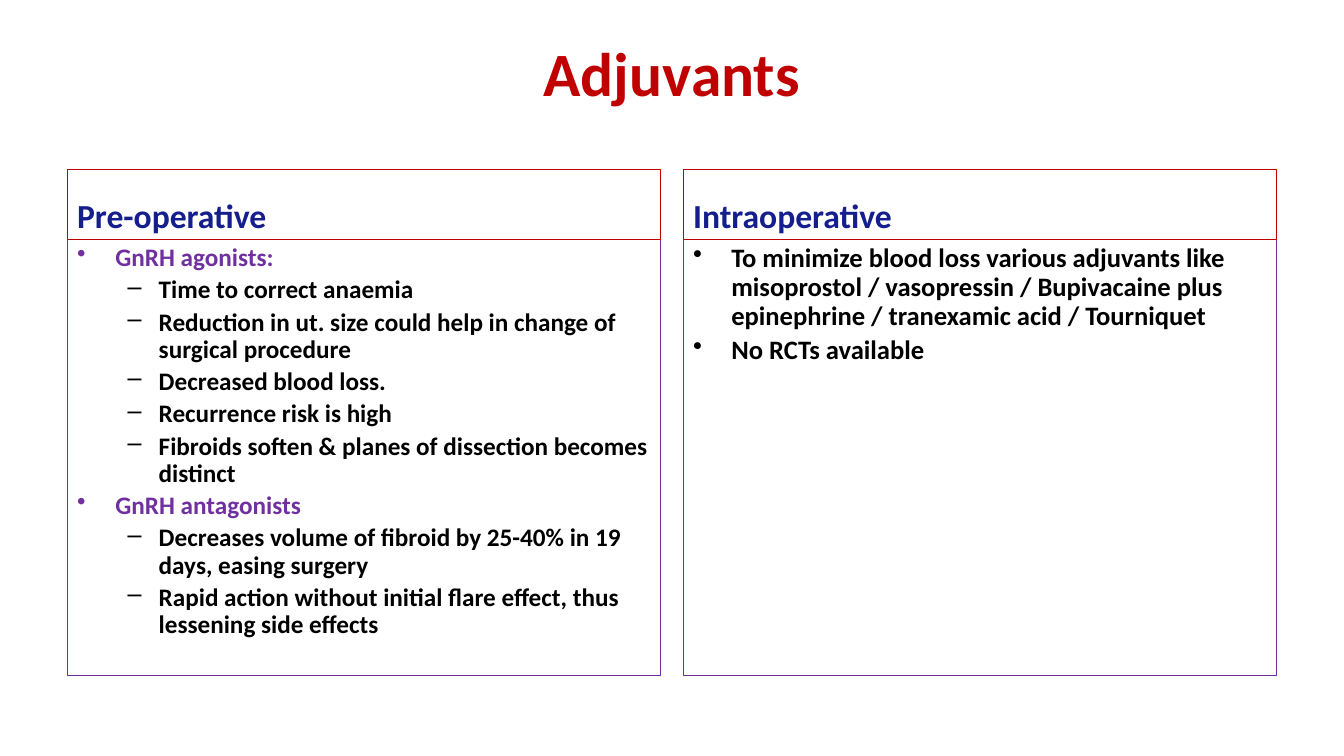
from dataclasses import dataclass

from lxml.etree import SubElement
from pptx import Presentation
from pptx.dml.color import RGBColor
from pptx.enum.shapes import MSO_SHAPE as Preset
from pptx.enum.text import MSO_ANCHOR as Anchor, PP_ALIGN as Align
from pptx.oxml.ns import qn
from pptx.shapes.autoshape import Shape
from pptx.slide import Slide
from pptx.util import Inches, Pt

WIDTH, HEIGHT = Inches(13.33), Inches(7.5)
COLUMNS, ROWS = 120, 75
MARGIN, PANEL_SPAN, PANEL_STEP = 6, 53, 55
HEADING_ROW, HEADING_ROWS = 16.8, 7
LIST_ROW, LIST_ROWS = HEADING_ROW + HEADING_ROWS, 43.2

RED, PURPLE, NAVY, BLACK = "C00000", "7030A0", "151E8D", "000000"
BULLETS = (("•", 0.38, 0.38), ("–", 0.81, 0.31))


@dataclass(frozen=True)
class Line:
    text: str
    level: int = 0
    color: str = BLACK


@dataclass(frozen=True)
class Panel:
    heading: str
    size: int
    lines: tuple[Line, ...]


PANELS = (
    Panel("Pre-operative", 18, (
        Line("GnRH agonists:", color=PURPLE),
        Line("Time to correct anaemia", 1),
        Line("Reduction in ut. size could help in change of surgical procedure", 1),
        Line("Decreased blood loss.", 1),
        Line("Recurrence risk is high", 1),
        Line("Fibroids soften & planes of dissection becomes distinct", 1),
        Line("GnRH antagonists", color=PURPLE),
        Line("Decreases volume of fibroid by 25-40% in 19 days, easing surgery", 1),
        Line("Rapid action without initial flare effect, thus lessening side effects", 1),
    )),
    Panel("Intraoperative", 19, (
        Line("To minimize blood loss various adjuvants like misoprostol / vasopressin / "
             "Bupivacaine plus epinephrine / tranexamic acid / Tourniquet"),
        Line("No RCTs available"),
    )),
)


def rgb(color: str) -> RGBColor:
    return RGBColor.from_string(color)


def set_values(target: object, values: dict[str, object]) -> None:
    for name, value in values.items():
        setattr(target, name, value)


def place(column: float, row: float, columns: float, rows: float) -> tuple[int, ...]:
    return (round(WIDTH * column / COLUMNS), round(HEIGHT * row / ROWS),
            round(WIDTH * columns / COLUMNS), round(HEIGHT * rows / ROWS))


def write_lines(shape: Shape, lines: tuple[Line, ...], size: int, anchor: Anchor,
                align: Align = Align.LEFT, bulleted: bool = False) -> None:
    frame = shape.text_frame
    set_values(frame, {"word_wrap": True, "vertical_anchor": anchor})
    for index, line in enumerate(lines):
        paragraph = frame.add_paragraph() if index else frame.paragraphs[0]
        values = {"text": line.text, "alignment": align, "level": line.level}
        if index:
            values["space_before"] = Pt(size * 0.2)
        if bulleted:
            values["line_spacing"] = 0.9
        set_values(paragraph, values)
        if bulleted:
            symbol, indent, hanging = BULLETS[line.level]
            properties = paragraph._p.get_or_add_pPr()
            properties.set("marL", str(Inches(indent)))
            properties.set("indent", str(-Inches(hanging)))
            SubElement(properties, qn("a:buChar")).set("char", symbol)
        set_values(paragraph.font, {"name": "Calibri", "size": Pt(size), "bold": True})
        paragraph.font.color.rgb = rgb(line.color)


def add_frame(slide: Slide, area: tuple[int, ...], color: str) -> Shape:
    shape = slide.shapes.add_shape(Preset.RECTANGLE, *area)
    shape.shadow.inherit = False
    shape.fill.background()
    shape.line.color.rgb = rgb(color)
    shape.line.width = Pt(0.75)
    return shape


def add_panel(slide: Slide, panel: Panel, column: float) -> None:
    body = add_frame(slide, place(column, LIST_ROW, PANEL_SPAN, LIST_ROWS), PURPLE)
    write_lines(body, panel.lines, panel.size, Anchor.TOP, bulleted=True)
    heading = add_frame(slide, place(column, HEADING_ROW, PANEL_SPAN, HEADING_ROWS), RED)
    write_lines(heading, (Line(panel.heading, color=NAVY),), 24, Anchor.BOTTOM)


def main() -> None:
    presentation = Presentation()
    set_values(presentation, {"slide_width": WIDTH, "slide_height": HEIGHT})
    slide = presentation.slides.add_slide(presentation.slide_layouts[6])
    title = slide.shapes.add_textbox(*place(MARGIN, 3, COLUMNS - 2 * MARGIN, 12.5))
    write_lines(title, (Line("Adjuvants", color=RED),), 44, Anchor.TOP, Align.CENTER)
    for index, panel in enumerate(PANELS):
        add_panel(slide, panel, MARGIN + index * PANEL_STEP)
    presentation.save("out.pptx")


if __name__ == "__main__":
    main()
